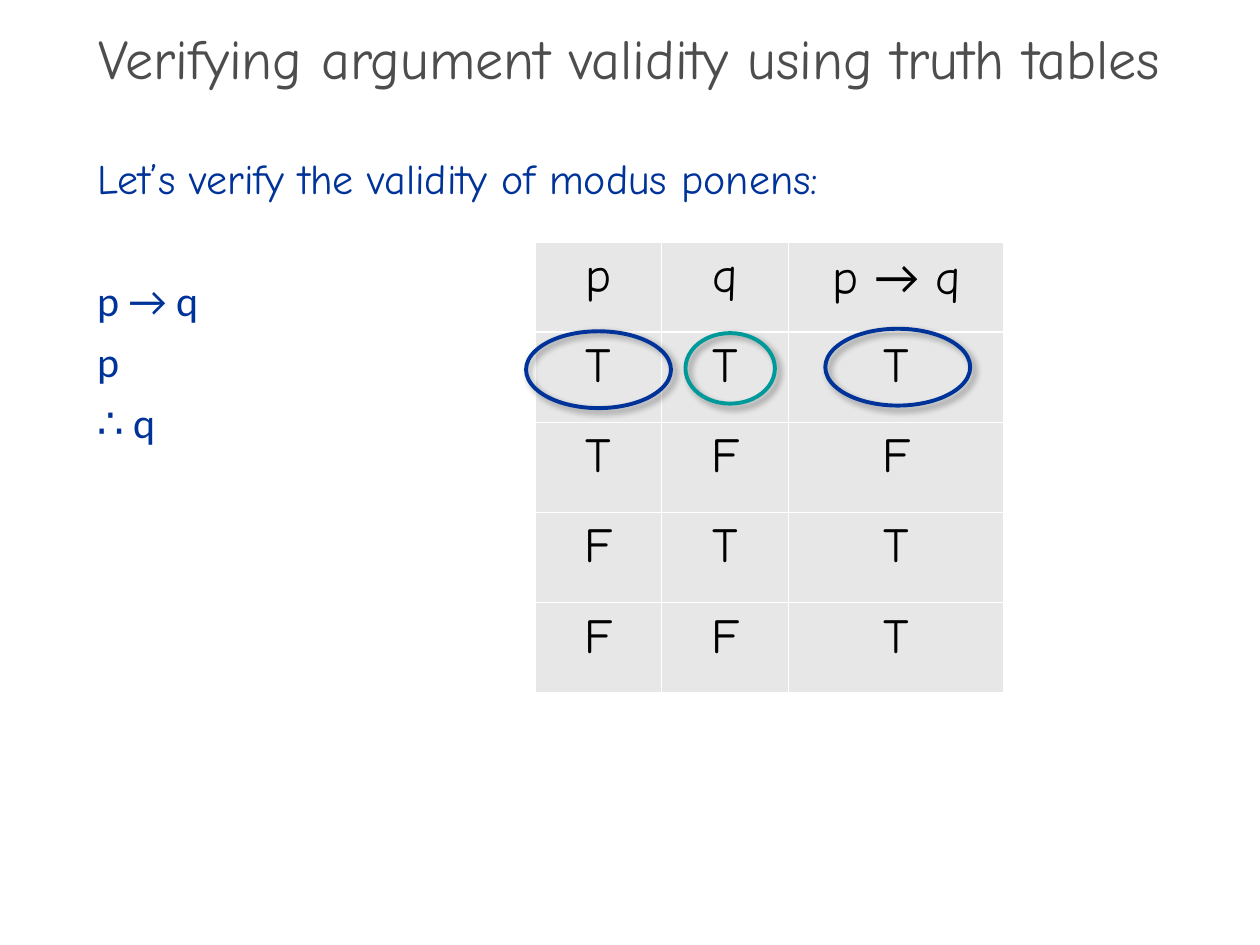
from lxml import etree
from pptx import Presentation
from pptx import util as u
from pptx.dml.color import RGBColor
from pptx.enum import shapes, text
from pptx.oxml import parse_xml
from pptx.oxml.ns import nsdecls, qn

COLORS = {
    "title": "4D4D4D",
    "blue": "003399",
    "teal": "009999",
    "cell": "E7E7E7",
    "border": "FFFFFF",
    "black": "000000",
}
HAND, PLAIN = "Comic Neue", "Calibri"

TABLE_LEFT, TABLE_TOP = 4.25, 1.92
COLUMN_WIDTHS = [1, 1.01, 1.71]
ROW_HEIGHT = 0.716
HEADER = [[("p", HAND)], [("q", HAND)], [("p ", HAND), ("→", PLAIN), (" q", HAND)]]
TRUTH_VALUES = ["TTT", "TFF", "FTT", "FFT"]


def color(name):
    return RGBColor.from_string(COLORS[name])


def add_run(paragraph, words, font, size, color_name):
    run = paragraph.add_run()
    run.text = words
    run.font.name = font
    run.font.size = u.Pt(size)
    run.font.color.rgb = color(color_name)


def place(shape, left, top, width, height):
    shape.left, shape.top = u.Inches(left), u.Inches(top)
    shape.width, shape.height = u.Inches(width), u.Inches(height)


def fill_title(title):
    place(title, 0, 0.27, 10, 0.5)
    title.text_frame.auto_size = text.MSO_AUTO_SIZE.NONE
    title.text_frame.vertical_anchor = text.MSO_ANCHOR.MIDDLE
    paragraph = title.text_frame.paragraphs[0]
    paragraph.alignment = text.PP_ALIGN.CENTER
    paragraph.line_spacing = 0.7
    add_run(paragraph, "Verifying argument validity using truth tables", HAND, 32, "title")


def fill_argument(body):
    """Write the introduction and, one line lower, the premises and conclusion."""
    place(body, 0.67, 1.16, 8.58, 5.92)
    frame = body.text_frame
    frame.auto_size = text.MSO_AUTO_SIZE.NONE
    lines = [
        ("Let’s verify the validity of modus ponens:", HAND, 0),
        ("p → q", PLAIN, 35),
        ("p", PLAIN, 0),
        ("∴ q", PLAIN, 0),
    ]
    for index, (words, font, space_before) in enumerate(lines):
        paragraph = frame.add_paragraph() if index else frame.paragraphs[0]
        paragraph.space_before = u.Pt(space_before)
        paragraph.space_after = u.Pt(6)
        properties = paragraph._p.get_or_add_pPr()
        properties.set("marL", "0")
        properties.set("indent", "0")
        etree.SubElement(properties, qn("a:buNone"))
        add_run(paragraph, words, font, 24, "blue")


def add_borders(cell):
    properties = cell._tc.get_or_add_tcPr()
    for index, side in enumerate(("lnL", "lnR", "lnT", "lnB")):
        properties.insert(index, parse_xml(
            f'<a:{side} {nsdecls("a")} w="{u.Pt(1)}"><a:solidFill>'
            f'<a:srgbClr val="{COLORS["border"]}"/></a:solidFill></a:{side}>'))


def fill_cell(cell, runs):
    cell.fill.solid()
    cell.fill.fore_color.rgb = color("cell")
    add_borders(cell)
    paragraph = cell.text_frame.paragraphs[0]
    paragraph.alignment = text.PP_ALIGN.CENTER
    for words, font in runs:
        add_run(paragraph, words, font, 28, "black")


def add_truth_table(slide):
    rows = [HEADER] + [[[(value, HAND)] for value in values] for values in TRUTH_VALUES]
    table = slide.shapes.add_table(
        len(rows), len(COLUMN_WIDTHS), u.Inches(TABLE_LEFT), u.Inches(TABLE_TOP),
        u.Inches(sum(COLUMN_WIDTHS)), u.Inches(ROW_HEIGHT * len(rows))).table
    table.first_row = table.horz_banding = False
    for column, width in zip(table.columns, COLUMN_WIDTHS):
        column.width = u.Inches(width)
    for row_index, row in enumerate(rows):
        table.rows[row_index].height = u.Inches(ROW_HEIGHT)
        for column_index, runs in enumerate(row):
            fill_cell(table.cell(row_index, column_index), runs)


def add_shadow(shape):
    shape.shadow.inherit = False
    effects = shape._element.spPr.find(qn("a:effectLst"))
    effects.append(parse_xml(
        f'<a:outerShdw {nsdecls("a")} blurRad="{u.Pt(4)}" dist="{u.Pt(3)}" '
        f'dir="2700000" algn="tl" rotWithShape="0"><a:srgbClr val="{COLORS["black"]}">'
        '<a:alpha val="40000"/></a:srgbClr></a:outerShdw>'))


def circle_first_row(slide, column, width, height, shift, color_name):
    """Ring a value in the first row of truth values, shifted from its cell's centre."""
    center_x = TABLE_LEFT + sum(COLUMN_WIDTHS[:column]) + COLUMN_WIDTHS[column] / 2 + shift[0]
    center_y = TABLE_TOP + 1.5 * ROW_HEIGHT + shift[1]
    ring = slide.shapes.add_shape(
        shapes.MSO_SHAPE.OVAL, u.Inches(center_x - width / 2),
        u.Inches(center_y - height / 2), u.Inches(width), u.Inches(height))
    ring.fill.background()
    ring.line.color.rgb = color(color_name)
    ring.line.width = u.Pt(2.25)
    add_shadow(ring)


def main():
    presentation = Presentation()
    presentation.slide_width, presentation.slide_height = u.Inches(10), u.Inches(7.5)
    slide = presentation.slides.add_slide(presentation.slide_layouts[1])
    fill_title(slide.shapes.title)
    fill_argument(slide.placeholders[1])
    add_truth_table(slide)
    circle_first_row(slide, 2, 1.15, 0.61, (0.01, -0.08), "blue")
    circle_first_row(slide, 0, 1.15, 0.61, (0, -0.06), "blue")
    circle_first_row(slide, 1, 0.71, 0.56, (0.04, -0.07), "teal")
    presentation.save("out.pptx")


if __name__ == "__main__":
    main()
